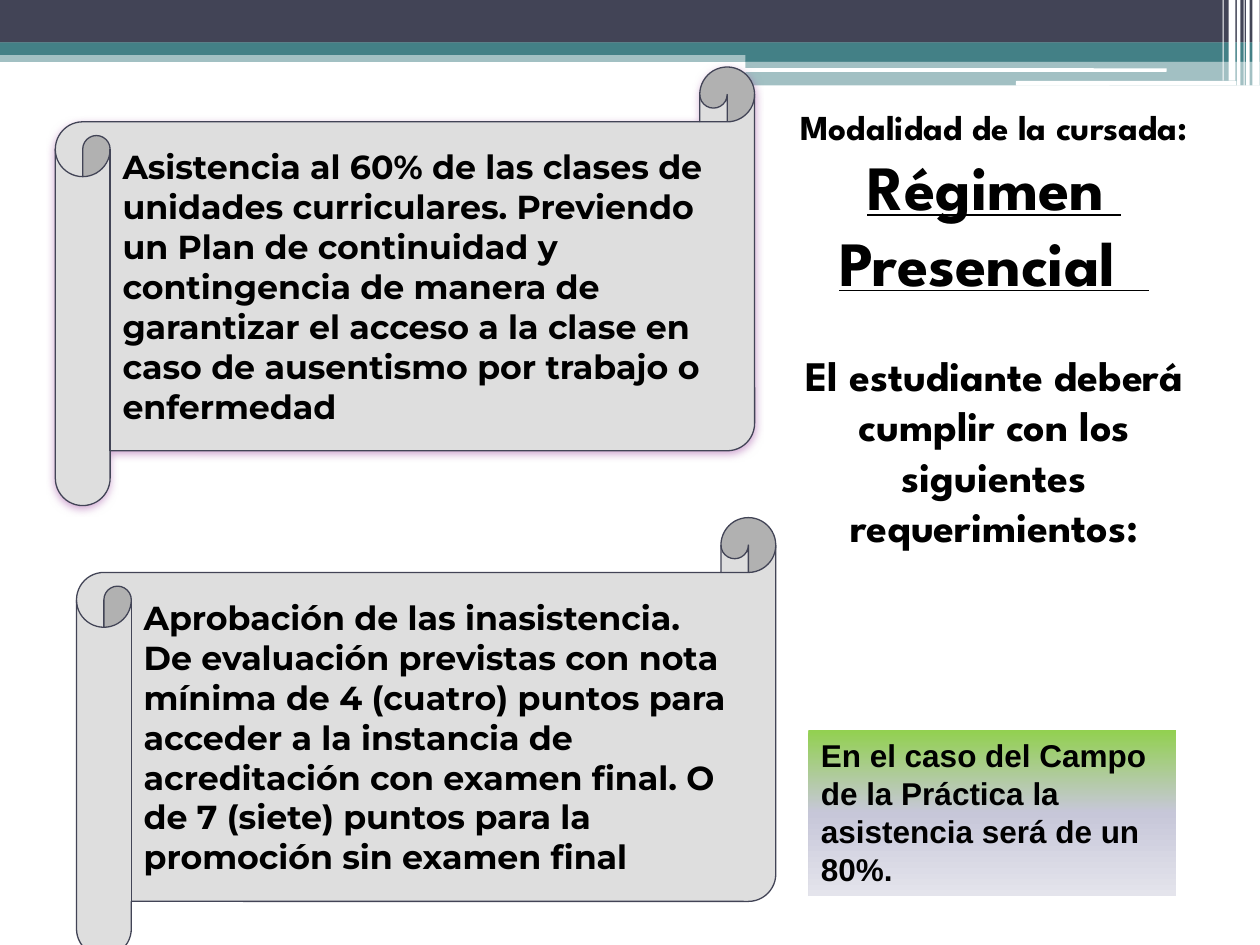
import copy

import pptx
import pptx.dml.color
import pptx.enum.shapes
import pptx.enum.text
import pptx.oxml
import pptx.oxml.ns
import pptx.util

Pt = pptx.util.Pt
RGBColor = pptx.dml.color.RGBColor
MSO_SHAPE = pptx.enum.shapes.MSO_SHAPE
MSO_ANCHOR = pptx.enum.text.MSO_ANCHOR
PP_ALIGN = pptx.enum.text.PP_ALIGN

NAVY = RGBColor(0x42, 0x44, 0x56)
TEAL = RGBColor(0x43, 0x80, 0x86)
WHITE = RGBColor(0xFF, 0xFF, 0xFF)
BLACK = RGBColor(0x00, 0x00, 0x00)
GREY = RGBColor(0xDE, 0xDE, 0xDE)
GREEN = RGBColor(0x92, 0xD0, 0x50)
LAVENDER = RGBColor(0xC7, 0xC7, 0xD9)
PALE_LAVENDER = RGBColor(0xE4, 0xE4, 0xEC)
NAMESPACE = pptx.oxml.ns.nsdecls("a")

presentation = pptx.Presentation()
presentation.slide_width = Pt(720)
presentation.slide_height = Pt(540)
slide = presentation.slides.add_slide(presentation.slide_layouts[6])


def add_shape(kind, left, top, width, height, color):
    shape = slide.shapes.add_shape(kind, Pt(left), Pt(top), Pt(width), Pt(height))
    shape.shadow.inherit = False
    shape.fill.solid()
    shape.fill.fore_color.rgb = color
    shape.line.fill.background()
    return shape


def add_run(paragraph, text, font_name, size):
    run = paragraph.add_run()
    run.text = text
    run.font.name = font_name
    run.font.size = Pt(size)
    run.font.bold = True
    run.font.color.rgb = BLACK
    return run


# Header bands: left, top, width, height, colour, opacity in percent
bands = [
    (0, 28.8, 720, 6.6, TEAL, 49),
    (0, 0, 720, 24.4, NAVY, 100),
    (0, 24.2, 720, 7.2, TEAL, 100),
    (426, 28.2, 294, 7, TEAL, 100),
    (426, 34.6, 294, 14.2, TEAL, 49),
]
for left, top, width, height, color, opacity in bands:
    band = add_shape(MSO_SHAPE.RECTANGLE, left, top, width, height, color)
    if opacity < 100:
        alpha = pptx.oxml.parse_xml(f'<a:alpha {NAMESPACE} val="{opacity * 1000}"/>')
        band._element.spPr.find(".//" + pptx.oxml.ns.qn("a:srgbClr")).append(alpha)

# White strips across the header
for left, top, width, height in [(425.5, 39, 241.2, 2), (580.5, 46.3, 126, 2.6)]:
    add_shape(MSO_SHAPE.ROUNDED_RECTANGLE, left, top, width, height, WHITE)

# White stripes at the right edge
stripes = [(715.6, 4.2, 49), (712.1, 2, 49), (710.6, 0.7, 49),
           (706.8, 2, 49), (702, 4, 46.1), (698.6, 0.7, 46.1)]
for left, width, height in stripes:
    add_shape(MSO_SHAPE.RECTANGLE, left, 0, width, height, WHITE)

# Heading column: text, size, underline, space before
heading_lines = [
    ("Modalidad de la cursada: ", 20, False, 0),
    ("Régimen ", 36, True, 0),
    ("Presencial  ", 36, True, 0),
    ("El estudiante deberá cumplir con los siguientes requerimientos:", 24, False, 28.8),
]
heading = slide.shapes.add_textbox(Pt(456.5), Pt(60.5), Pt(226.8), Pt(339.8))
frame = heading.text_frame
frame.word_wrap = True
frame.margin_left = frame.margin_top = 0
frame.margin_right = frame.margin_bottom = Pt(3.6)
for index, (text, size, underline, space_before) in enumerate(heading_lines):
    paragraph = frame.add_paragraph() if index else frame.paragraphs[0]
    paragraph.alignment = PP_ALIGN.CENTER
    paragraph.space_before = Pt(space_before)
    add_run(paragraph, text, "League Spartan", size).font.underline = underline

# Gradient note on attendance
note = add_shape(MSO_SHAPE.RECTANGLE, 462, 417.3, 210, 94.5, GREEN)
note.fill.gradient()
note.fill.gradient_angle = 270
stop_list = note._element.spPr.find(".//" + pptx.oxml.ns.qn("a:gsLst"))
stop_list.append(copy.deepcopy(stop_list[0]))
note_stops = [(0, GREEN), (0.5, LAVENDER), (1, PALE_LAVENDER)]
for stop, (position, color) in zip(note.fill.gradient_stops, note_stops):
    stop.position = position
    stop.color.rgb = color
note.text_frame.word_wrap = True
note.text_frame.vertical_anchor = MSO_ANCHOR.TOP
paragraph = note.text_frame.paragraphs[0]
paragraph.alignment = PP_ALIGN.LEFT
add_run(paragraph, "En el caso del Campo de la Práctica la asistencia será de un 80%.", "Arial", 18)

# Requirement scrolls
requirements = [
    (31.6, 38.3, "Asistencia al 60% de las clases de unidades curriculares. "
     "Previendo un Plan de continuidad y contingencia de manera de garantizar "
     "el acceso a la clase en caso de ausentismo por trabajo o enfermedad"),
    (43.7, 295.8, "Aprobación de las inasistencia. De evaluación previstas con "
     "nota mínima de 4 (cuatro) puntos para acceder a la instancia de "
     "acreditación con examen final. O de 7 (siete) puntos para la promoción "
     "sin examen final"),
]
scrolls = []
for left, top, text in requirements:
    scroll = add_shape(MSO_SHAPE.HORIZONTAL_SCROLL, left, top, 399.6, 250.6, GREY)
    scroll.adjustments[0] = 0.125
    scroll.line.color.rgb = NAVY
    scroll.line.width = Pt(0.75)
    frame = scroll.text_frame
    frame.word_wrap = True
    frame.vertical_anchor = MSO_ANCHOR.MIDDLE
    frame.margin_left = frame.margin_right = Pt(7.2)
    frame.margin_top = frame.margin_bottom = Pt(7.2)
    paragraph = frame.paragraphs[0]
    paragraph.alignment = PP_ALIGN.LEFT
    add_run(paragraph, text, "Montserrat", 19)
    scrolls.append(scroll)

# Purple glow under the first scroll
effects = scrolls[0]._element.spPr.find(pptx.oxml.ns.qn("a:effectLst"))
effects.append(pptx.oxml.parse_xml(
    f'<a:outerShdw {NAMESPACE} blurRad="{Pt(4.5)}" dist="{Pt(1.5)}" dir="5400000" '
    'rotWithShape="0"><a:srgbClr val="A04DA3"><a:alpha val="50000"/></a:srgbClr>'
    '</a:outerShdw>'))

presentation.save("out.pptx")
